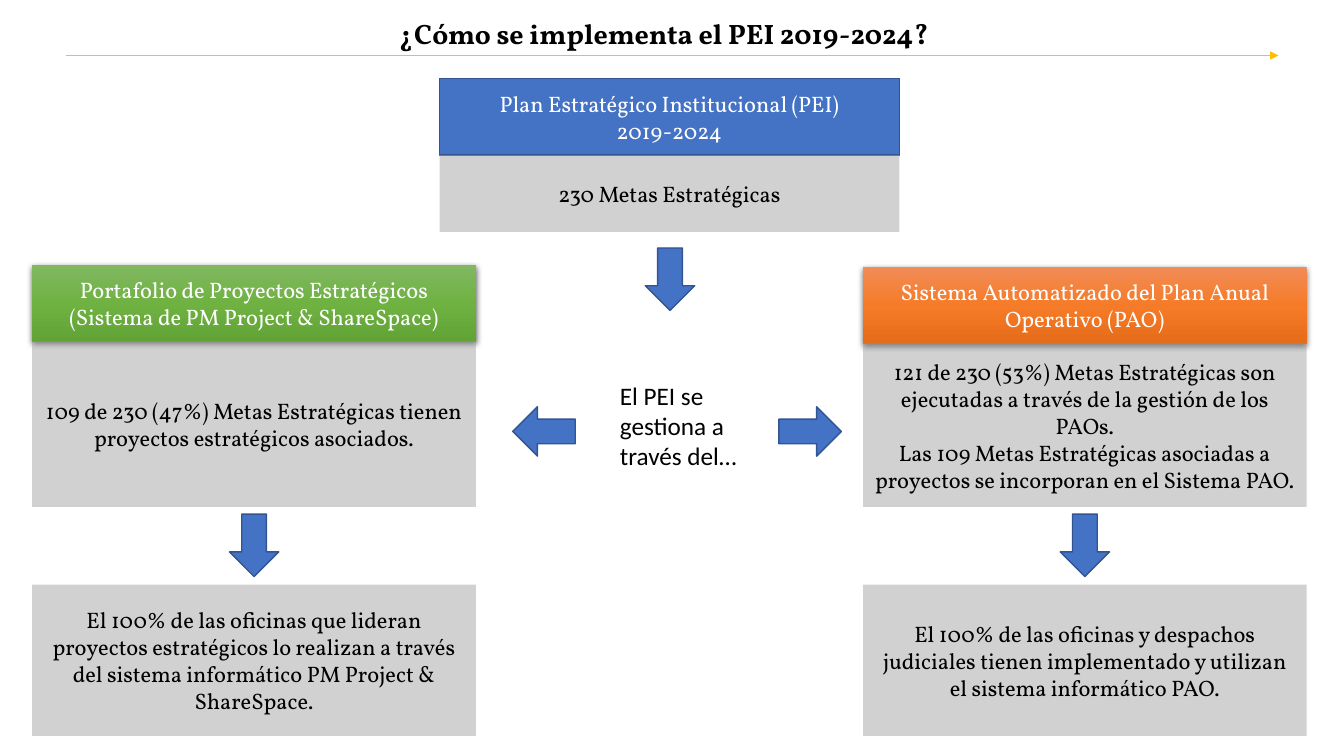
from copy import deepcopy

from lxml import etree
from pptx import Presentation
from pptx import util as u
from pptx.dml.color import RGBColor
from pptx.enum import shapes, text
from pptx.oxml.ns import qn

COLORS = {
    "blue": "4472C4", "navy": "325491", "gray": "A5A5A5", "gold": "FFC000",
    "white": "FFFFFF", "black": "000000",
}
GRADIENTS = {
    "green": ["81B861", "6FB242", "62A336"],
    "orange": ["F18C57", "F67B28", "E56C19"],
}
LEFT, CENTER, RIGHT = 0.32, 4.36, 8.56
SIDE_WIDTH, CENTER_WIDTH, HEADER_HEIGHT = 4.4, 4.56, 0.76
ARROW_WIDTH, ARROW_HEIGHT = 0.49, 0.62


def rgb(name):
    """Return the named palette colour."""
    return RGBColor.from_string(COLORS[name])


def write(shape, lines, color="black", size=16, font="Vollkorn", bold=False, centered=True):
    """Fill a shape with one paragraph per line and format it."""
    frame = shape.text_frame
    frame.word_wrap = True
    frame.text = "\n".join(lines)
    for para in frame.paragraphs:
        para.alignment = text.PP_ALIGN.CENTER if centered else text.PP_ALIGN.LEFT
        for span in para.runs:
            span.font.name = font
            span.font.size = u.Pt(size)
            span.font.bold = bold
            span.font.color.rgb = rgb(color)


def add_preset(page, kind, left, top, width, height):
    """Add a preset shape with neither shadow nor outline."""
    shape = page.shapes.add_shape(
        kind, u.Inches(left), u.Inches(top), u.Inches(width), u.Inches(height))
    shape.shadow.inherit = False
    shape.line.fill.background()
    return shape


def paint_blue(shape):
    """Give a shape the blue fill and its darker outline."""
    shape.fill.solid()
    shape.fill.fore_color.rgb = rgb("blue")
    shape.line.color.rgb = rgb("navy")
    shape.line.width = u.Pt(1)


def paint_gradient(shape, stops):
    """Give a shape a vertical three-stop gradient and a soft shadow."""
    shape.fill.gradient()
    shape.fill.gradient_angle = 270
    properties = shape._element.spPr
    stop_list = properties.find(".//" + qn("a:gsLst"))
    stop_list.append(deepcopy(stop_list[-1]))
    for index, stop in enumerate(shape.fill.gradient_stops):
        stop.position = index / 2
        stop.color.rgb = RGBColor.from_string(stops[index])
    shadow = etree.SubElement(
        properties.find(qn("a:effectLst")), qn("a:outerShdw"),
        blurRad=str(u.Pt(4.5)), dist=str(u.Pt(1.5)), dir="5400000",
        algn="ctr", rotWithShape="0")
    color = etree.SubElement(shadow, qn("a:srgbClr"), val=COLORS["black"])
    etree.SubElement(color, qn("a:alpha"), val="63000")


def add_header(page, left, top, width, lines, gradient=None):
    """Add a coloured heading box with white text."""
    box = add_preset(page, shapes.MSO_SHAPE.RECTANGLE, left, top, width, HEADER_HEIGHT)
    if gradient:
        paint_gradient(box, GRADIENTS[gradient])
    else:
        paint_blue(box)
    write(box, lines, "white")


def add_detail(page, left, top, width, height, lines):
    """Add a half-transparent gray box with black text."""
    box = add_preset(page, shapes.MSO_SHAPE.RECTANGLE, left, top, width, height)
    box.fill.solid()
    box.fill.fore_color.rgb = rgb("gray")
    color = box._element.spPr.find(qn("a:solidFill"))[0]
    etree.SubElement(color, qn("a:alpha"), val="50000")
    write(box, lines)


def add_arrow(page, left, top, rotation=0):
    """Add a blue block arrow that points down before rotation."""
    arrow = add_preset(
        page, shapes.MSO_SHAPE.DOWN_ARROW, left, top, ARROW_WIDTH, ARROW_HEIGHT)
    arrow.rotation = rotation
    paint_blue(arrow)


def add_label(page, left, top, width, height, line, **style):
    """Add a wrapped text box."""
    box = page.shapes.add_textbox(
        u.Inches(left), u.Inches(top), u.Inches(width), u.Inches(height))
    write(box, [line], **style)


def add_rule(page, left, right, top):
    """Add the gold line with an arrowhead under the title."""
    rule = page.shapes.add_connector(
        shapes.MSO_CONNECTOR.STRAIGHT,
        u.Inches(left), u.Inches(top), u.Inches(right), u.Inches(top))
    rule.line.color.rgb = rgb("gold")
    rule.line.width = u.Pt(1)
    etree.SubElement(rule.line._get_or_add_ln(), qn("a:tailEnd"), type="triangle")
    etree.SubElement(rule._element.spPr, qn("a:effectLst"))


def main():
    """Build the slide and save it."""
    deck = Presentation()
    deck.slide_width, deck.slide_height = u.Inches(13.33), u.Inches(7.5)
    page = deck.slides.add_slide(deck.slide_layouts[6])

    add_header(page, CENTER, 0.78, CENTER_WIDTH,
               ["Plan Estratégico Institucional (PEI)", "2019-2024"])
    add_detail(page, CENTER, 1.54, CENTER_WIDTH, HEADER_HEIGHT, ["230 Metas Estratégicas"])

    columns = [
        (LEFT, 2.63, "green",
         ["Portafolio de Proyectos Estratégicos", "(Sistema de PM Project & ShareSpace)"],
         ["109 de 230 (47%) Metas Estratégicas tienen proyectos estratégicos asociados."],
         "El 100% de las oficinas que lideran proyectos estratégicos lo realizan "
         "a través del sistema informático PM Project & ShareSpace."),
        (RIGHT, 2.65, "orange",
         ["Sistema Automatizado del Plan Anual Operativo (PAO)"],
         ["121 de 230 (53%) Metas Estratégicas son ejecutadas a través de la gestión de los PAOs.",
          "Las 109 Metas Estratégicas asociadas a proyectos se incorporan en el Sistema PAO."],
         "El 100% de las oficinas y despachos judiciales tienen implementado "
         "y utilizan el sistema informático PAO."),
    ]
    for left, top, gradient, heading, goals, result in columns:
        goals_top = top + HEADER_HEIGHT
        add_header(page, left, top, SIDE_WIDTH, heading, gradient)
        add_detail(page, left, goals_top, SIDE_WIDTH, 5.03 - goals_top, goals)
        add_arrow(page, left + (SIDE_WIDTH - ARROW_WIDTH) / 2, 5.1)
        add_detail(page, left, 5.8, SIDE_WIDTH, 1.5, [result])

    for left, top, rotation in [(6.4, 2.46, 0), (5.15, 3.97, 90), (7.79, 3.97, 270)]:
        add_arrow(page, left, top, rotation)
    add_label(page, 6.05, 3.72, 1.68, 1.01, "El PEI se gestiona a través del…",
              size=18, font="Calibri", centered=False)
    add_label(page, 0.43, 0.11, 12.31, 0.44, "¿Cómo se implementa el PEI 2019-2024?",
              size=20, bold=True)
    add_rule(page, 0.65, 12.68, 0.55)
    deck.save("out.pptx")


if __name__ == "__main__":
    main()
